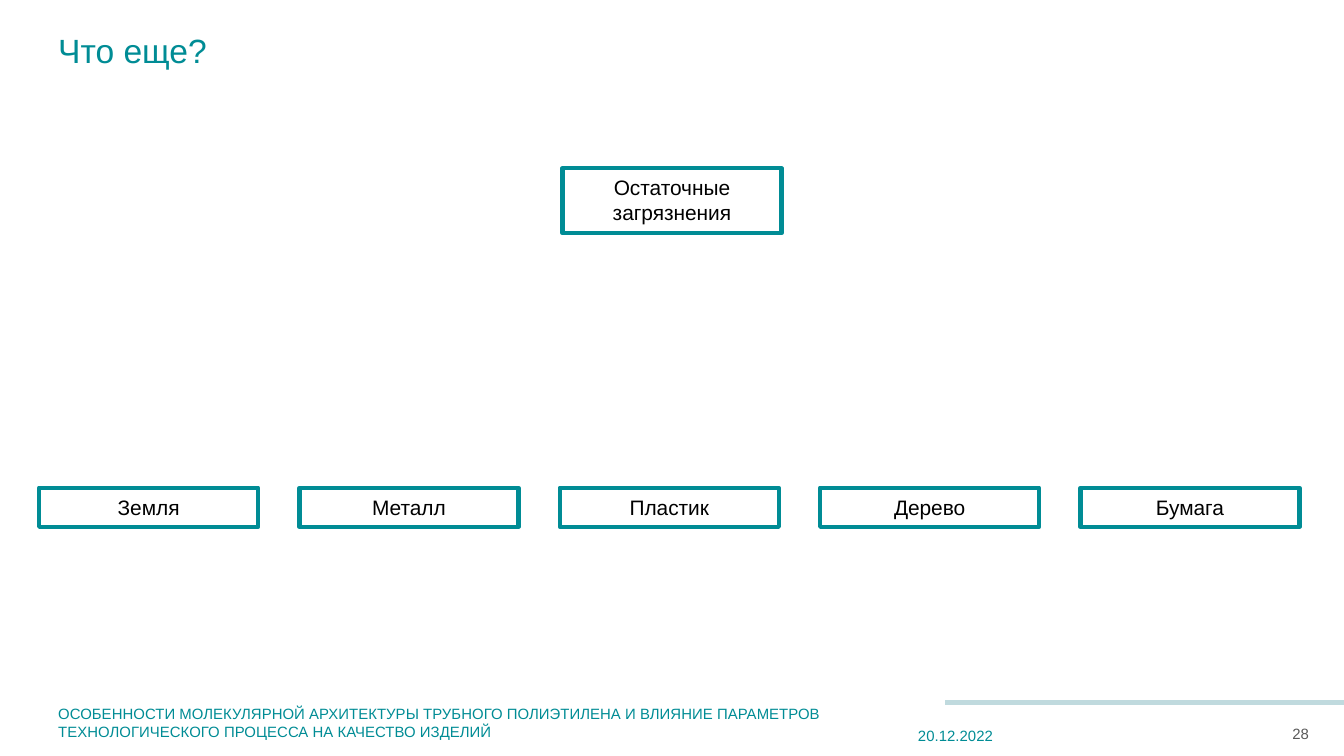
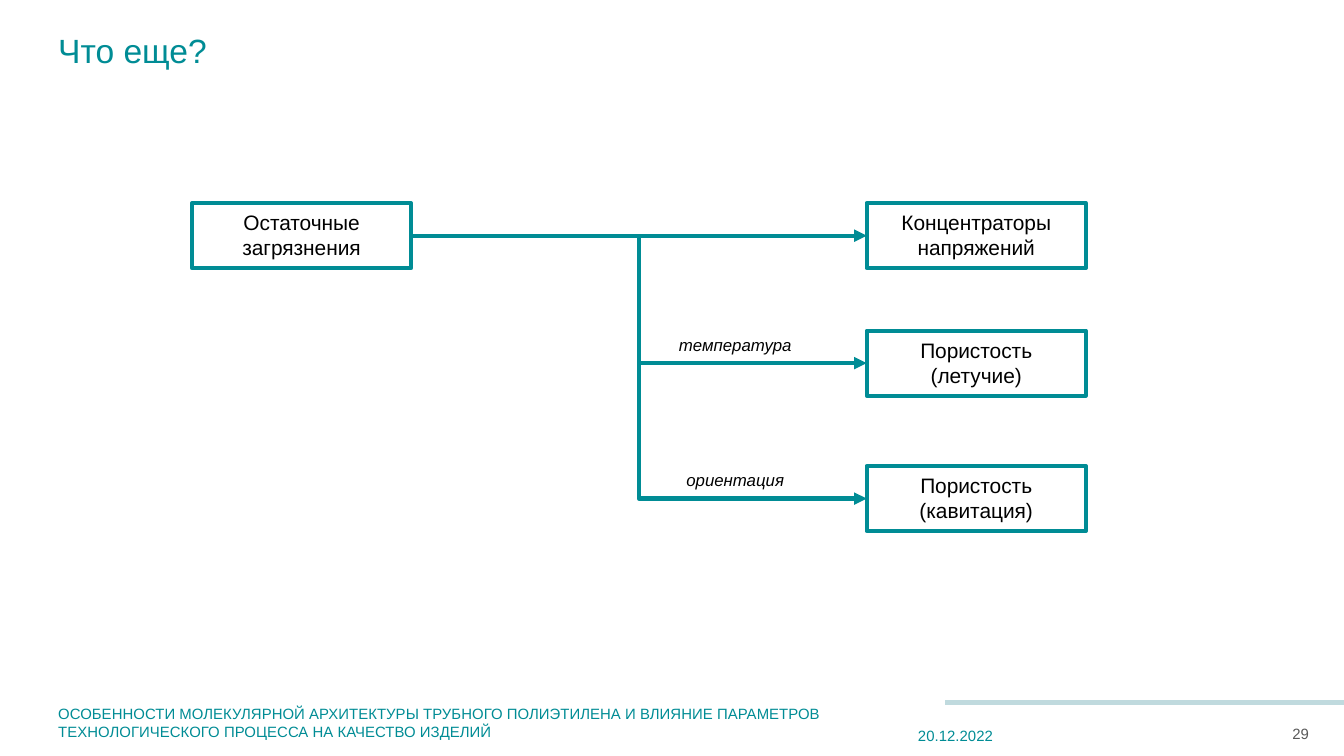
from dataclasses import dataclass

from pptx import Presentation
from pptx.dml.color import RGBColor as RGB
from pptx.enum.shapes import MSO_CONNECTOR as CONN, MSO_SHAPE as SHAPE
from pptx.enum.text import MSO_ANCHOR as ANCHOR, MSO_AUTO_SIZE as AUTO, PP_ALIGN as ALIGN
from pptx.oxml.ns import qn
from pptx.util import Cm, Pt
from lxml.etree import SubElement

TITLE = "Что еще?"
DATE = "20.12.2022"
TALK = ("ОСОБЕННОСТИ МОЛЕКУЛЯРНОЙ АРХИТЕКТУРЫ ТРУБНОГО ПОЛИЭТИЛЕНА И ВЛИЯНИЕ "
        "ПАРАМЕТРОВ ТЕХНОЛОГИЧЕСКОГО ПРОЦЕССА НА КАЧЕСТВО ИЗДЕЛИЙ")
FIRST_NUMBER = 28

CAUSE = "Остаточные загрязнения"
KINDS = ["Земля", "Металл", "Пластик", "Дерево", "Бумага"]
EFFECTS = [  # box text, top in cm, condition on the arrow
    ("Концентраторы напряжений", 3.84, None),
    ("Пористость (летучие)", 6.25, "температура"),
    ("Пористость (кавитация)", 8.81, "ориентация"),
]


@dataclass(frozen=True)
class Theme:
    font: str = "Arial"
    teal: RGB = RGB(0x00, 0x8C, 0x95)
    pale: RGB = RGB(0xC0, 0xDA, 0xDE)
    grey: RGB = RGB(0x59, 0x59, 0x59)
    black: RGB = RGB(0, 0, 0)
    title: float = 18
    box: float = 11.2
    label: float = 9
    footer: float = 8
    line: float = 2.25
    band: float = 2.75


T = Theme()
SLIDE_W, SLIDE_H = 25.4, 14.29
BOX_W, BOX_H, LOW_BOX_H = 4.14, 1.23, 0.74
KINDS_LEFT, KINDS_TOP, KINDS_STEP = 0.74, 9.22, 4.92
EFFECTS_LEFT = 16.38
LABEL_LEFT, LABEL_W, LABEL_H = 12.04, 3.71, 0.64


def write(sp, text, size, color, align=ALIGN.LEFT, italic=None):
    tf = sp.text_frame
    tf.word_wrap = True
    p = tf.paragraphs[0]
    p.text, p.alignment = text, align
    f = p.font
    f.name, f.size, f.italic = T.font, Pt(size), italic
    f.color.rgb = color
    return tf


def add_text(s, at, text, size, color, anchor=ANCHOR.TOP, align=ALIGN.LEFT,
             insets=(0, 0, 0, 0)):
    tf = write(s.shapes.add_textbox(*map(Cm, at)), text, size, color, align)
    tf.vertical_anchor = anchor
    tf.margin_left, tf.margin_top, tf.margin_right, tf.margin_bottom = map(Cm, insets)


def add_line(s, kind, ends, color, width, arrow=False):
    c = s.shapes.add_connector(kind, *map(Cm, ends))
    c.line.color.rgb, c.line.width = color, Pt(width)
    props = c.element.spPr
    if arrow:
        SubElement(props.find(qn("a:ln")), qn("a:tailEnd"), type="triangle")
    SubElement(props, qn("a:effectLst"))
    return c


def add_box(s, left, top, text, height=BOX_H):
    sp = s.shapes.add_shape(SHAPE.RECTANGLE, Cm(left), Cm(top), Cm(BOX_W), Cm(height))
    sp.shadow.inherit = False
    sp.fill.background()
    sp.line.color.rgb, sp.line.width = T.teal, Pt(T.line)
    tf = write(sp, text, T.box, T.black, ALIGN.CENTER)
    tf.vertical_anchor, tf.auto_size = ANCHOR.TOP, AUTO.SHAPE_TO_FIT_TEXT
    return sp


def add_label(s, top, text):
    sp = s.shapes.add_textbox(Cm(LABEL_LEFT), Cm(top), Cm(LABEL_W), Cm(LABEL_H))
    write(sp, text, T.label, T.black, ALIGN.CENTER, True).auto_size = AUTO.SHAPE_TO_FIT_TEXT


def add_slide(prs):
    """Add a blank slide with the shared title, band and footer."""
    s = prs.slides.add_slide(prs.slide_layouts[6])
    number = FIRST_NUMBER + len(prs.slides) - 1
    add_line(s, CONN.STRAIGHT, (17.86, 13.28, SLIDE_W, 13.28), T.pale, T.band)
    add_text(s, (1.1, 0.56, 23.6, 1.47), TITLE, T.title, T.teal)
    add_text(s, (17.35, 13.67, 2.59, 0.46), DATE, T.footer, T.teal, ANCHOR.MIDDLE)
    add_text(s, (1.1, 13.21, 16.23, 0.91), TALK, T.footer, T.teal, ANCHOR.BOTTOM,
             insets=(0, 0.13, 0.25, 0.13))
    add_text(s, (23.93, 13.62, 0.81, 0.48), str(number), T.footer, T.grey,
             ANCHOR.MIDDLE, ALIGN.RIGHT)
    return s


def kinds_slide(prs):
    s = add_slide(prs)
    add_box(s, (SLIDE_W - BOX_W) / 2, 3.18, CAUSE)
    for i, kind in enumerate(KINDS):
        add_box(s, KINDS_LEFT + i * KINDS_STEP, KINDS_TOP, kind, LOW_BOX_H)


def effects_slide(prs):
    s = add_slide(prs)
    cause = add_box(s, 3.63, EFFECTS[0][1], CAUSE)
    for text, top, condition in EFFECTS:
        effect = add_box(s, EFFECTS_LEFT, top, text)
        kind = CONN.ELBOW if condition else CONN.STRAIGHT
        c = add_line(s, kind, (0, 0, 1, 1), T.teal, T.line, arrow=True)
        c.begin_connect(cause, 3)  # right side
        c.end_connect(effect, 1)  # left side
        if condition:
            add_label(s, top - 0.05, condition)


def main():
    prs = Presentation()
    prs.slide_width, prs.slide_height = Cm(SLIDE_W), Cm(SLIDE_H)
    kinds_slide(prs)
    effects_slide(prs)
    prs.save("out.pptx")


if __name__ == "__main__":
    main()
